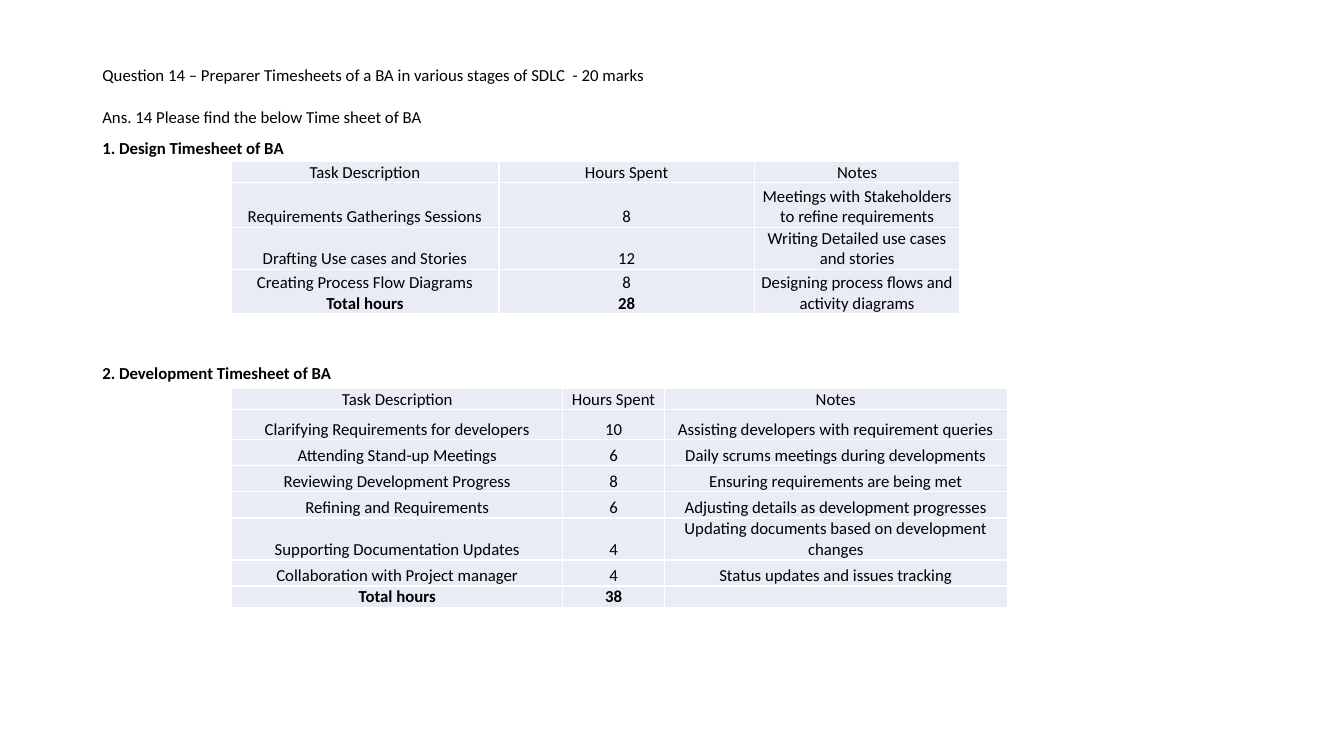
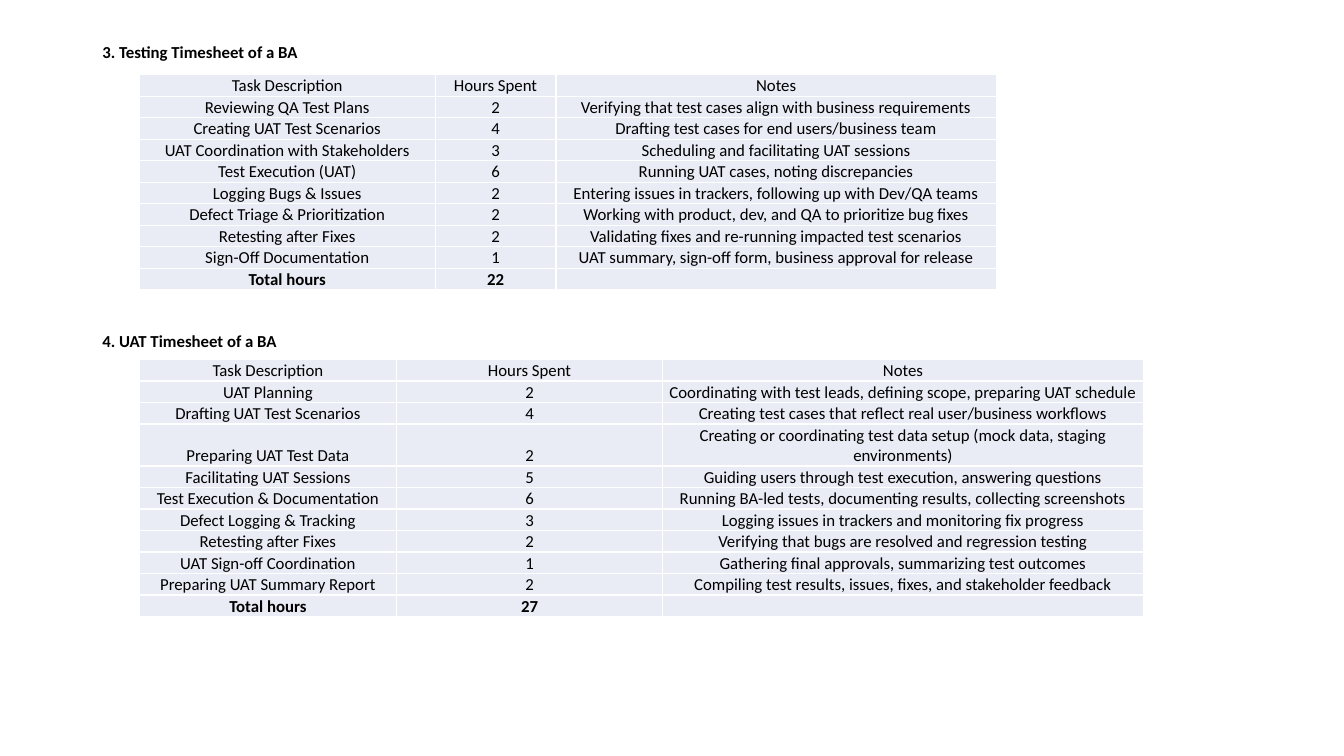
from lxml.etree import SubElement
from pptx import Presentation
from pptx.dml.color import RGBColor
from pptx.enum.text import MSO_ANCHOR as ANCHOR, MSO_AUTO_SIZE as AUTO, PP_ALIGN as ALIGN
from pptx.oxml.ns import qn
from pptx.util import Inches, Pt

COLS, ROWS = 160, 90
UNIT = Pt(6)
LINE, DOUBLE = 2.56, 5
HEADER = ("Task Description", "Hours Spent", "Notes")


def grid(n):
    return int(UNIT * n)


def color(value):
    return RGBColor.from_string(value)


class Deck:
    font, size = "Calibri", 12
    ink, cell_fill, border = "000000", "E9EBF5", "FFFFFF"
    left, width = 11, 138
    title_only, blank = 5, 6

    def __init__(self):
        self.prs = Presentation()
        self.prs.slide_width = grid(COLS)
        self.prs.slide_height = grid(ROWS)

    def slide(self, title=None):
        layout = self.blank if title is None else self.title_only
        self.s = self.prs.slides.add_slide(self.prs.slide_layouts[layout])
        if title is not None:
            sp = self.s.shapes.title
            sp.left, sp.top = grid(self.left), grid(4.8)
            sp.width, sp.height = grid(self.width), grid(8.6)
            self.block(sp.text_frame, title, ANCHOR.MIDDLE)

    def style(self, p, text, align, bold=False):
        p.text = text
        p.alignment = align
        f = p.font
        f.name, f.size, f.bold = self.font, Pt(self.size), bold
        f.color.rgb = color(self.ink)

    def block(self, tf, text, anchor, bold=False):
        tf.word_wrap, tf.auto_size = True, AUTO.NONE
        tf.vertical_anchor = anchor
        p = tf.paragraphs[0]
        self.style(p, text, ALIGN.LEFT, bold)
        p.line_spacing = 0.9

    def text(self, text, top, bold=False):
        sp = self.s.shapes.add_textbox(grid(self.left), grid(top), grid(self.width), grid(3.4))
        self.block(sp.text_frame, text, ANCHOR.TOP, bold)

    def heading(self, text, top):
        self.text(text, top, bold=True)

    def borders(self, cell):
        tc_pr = cell._tc.get_or_add_tcPr()
        for side in ("lnL", "lnR", "lnT", "lnB"):
            ln = SubElement(tc_pr, qn(f"a:{side}"), w=str(Pt(1)))
            SubElement(SubElement(ln, qn("a:solidFill")), qn("a:srgbClr"), val=self.border)

    def cell(self, cell, text):
        self.borders(cell)
        cell.fill.solid()
        cell.fill.fore_color.rgb = color(self.cell_fill)
        cell.vertical_anchor = ANCHOR.BOTTOM
        cell.margin_left = cell.margin_right = cell.margin_top = Inches(0.01)
        cell.margin_bottom = 0
        tf = cell.text_frame
        for i, line in enumerate(text.split("\n")):
            p = tf.add_paragraph() if i else tf.paragraphs[0]
            self.style(p, line.removeprefix("*"), ALIGN.CENTER, line.startswith("*"))
            if not line:
                p._p.get_or_add_endParaRPr().set("sz", str(self.size * 100))

    def table(self, left, top, widths, rows, heights=None):
        rows = [HEADER, *rows]
        heights = heights or [LINE] * len(rows)
        tbl = self.s.shapes.add_table(len(rows), len(widths), grid(left), grid(top),
                                      grid(sum(widths)), grid(sum(heights))).table
        tbl.first_row = tbl.horz_banding = False
        for col, w in zip(tbl.columns, widths):
            col.width = grid(w)
        for r, (row, h) in enumerate(zip(rows, heights)):
            tbl.rows[r].height = grid(h)
            for c, text in enumerate(row):
                self.cell(tbl.cell(r, c), text)


DESIGN = [
    ("Requirements Gatherings Sessions", "8", "Meetings with Stakeholders to refine requirements"),
    ("Drafting Use cases and Stories", "12", "Writing Detailed use cases and stories"),
    ("Creating Process Flow Diagrams\n*Total hours", "8\n*28",
     "Designing process flows and activity diagrams"),
]
DEVELOPMENT = [
    ("Clarifying Requirements for developers", "10", "Assisting developers with requirement queries"),
    ("Attending Stand-up Meetings", "6", "Daily scrums meetings during developments"),
    ("Reviewing Development Progress", "8", "Ensuring requirements are being met"),
    ("Refining and Requirements", "6", "Adjusting details as development progresses"),
    ("Supporting Documentation Updates", "4", "Updating documents based on development changes"),
    ("Collaboration with Project manager", "4", "Status updates and issues tracking"),
    ("*Total hours", "*38", ""),
]
TESTING = [
    ("Reviewing QA Test Plans", "2", "Verifying that test cases align with business requirements"),
    ("Creating UAT Test Scenarios", "4", "Drafting test cases for end users/business team"),
    ("UAT Coordination with Stakeholders", "3", "Scheduling and facilitating UAT sessions"),
    ("Test Execution (UAT)", "6", "Running UAT cases, noting discrepancies"),
    ("Logging Bugs & Issues", "2", "Entering issues in trackers, following up with Dev/QA teams"),
    ("Defect Triage & Prioritization", "2", "Working with product, dev, and QA to prioritize bug fixes"),
    ("Retesting after Fixes", "2", "Validating fixes and re-running impacted test scenarios"),
    ("Sign-Off Documentation", "1", "UAT summary, sign-off form, business approval for release"),
    ("*Total hours", "*22", ""),
]
UAT = [
    ("UAT Planning", "2", "Coordinating with test leads, defining scope, preparing UAT schedule"),
    ("Drafting UAT Test Scenarios", "4", "Creating test cases that reflect real user/business workflows"),
    ("Preparing UAT Test Data", "2",
     "Creating or coordinating test data setup (mock data, staging environments)"),
    ("Facilitating UAT Sessions", "5", "Guiding users through test execution, answering questions"),
    ("Test Execution & Documentation", "6",
     "Running BA-led tests, documenting results, collecting screenshots"),
    ("Defect Logging & Tracking", "3", "Logging issues in trackers and monitoring fix progress"),
    ("Retesting after Fixes", "2", "Verifying that bugs are resolved and regression testing"),
    ("UAT Sign-off Coordination", "1", "Gathering final approvals, summarizing test outcomes"),
    ("Preparing UAT Summary Report", "2",
     "Compiling test results, issues, fixes, and stakeholder feedback"),
    ("*Total hours", "*27", ""),
]


def main():
    deck = Deck()

    deck.slide("Question 14 – Preparer Timesheets of a BA in various stages of SDLC  - 20 marks")
    deck.text("Ans. 14 Please find the below Time sheet of BA", 12.4)
    deck.heading("1. Design Timesheet of BA", 16.1)
    deck.table(27.5, 19.2, (31.9, 30.4, 24.5), DESIGN, [LINE, 5.3, DOUBLE, 5.3])
    deck.heading("2. Development Timesheet of BA", 42.9)
    deck.table(27.6, 46.2, (39.4, 12.1, 40.8), DEVELOPMENT,
               [LINE, 3.6, 3.1, 3.1, 3.1, DOUBLE, 3.1, LINE])

    deck.slide()
    deck.heading("3. Testing Timesheet of a BA", 4.6)
    deck.table(16.6, 8.9, (35.2, 14.4, 52.4), TESTING)
    deck.heading("4. UAT Timesheet of a BA", 39.1)
    deck.table(16.6, 42.8, (30.6, 31.7, 57.2), UAT, [LINE] * 3 + [DOUBLE] + [LINE] * 7)

    deck.prs.save("out.pptx")


if __name__ == "__main__":
    main()
